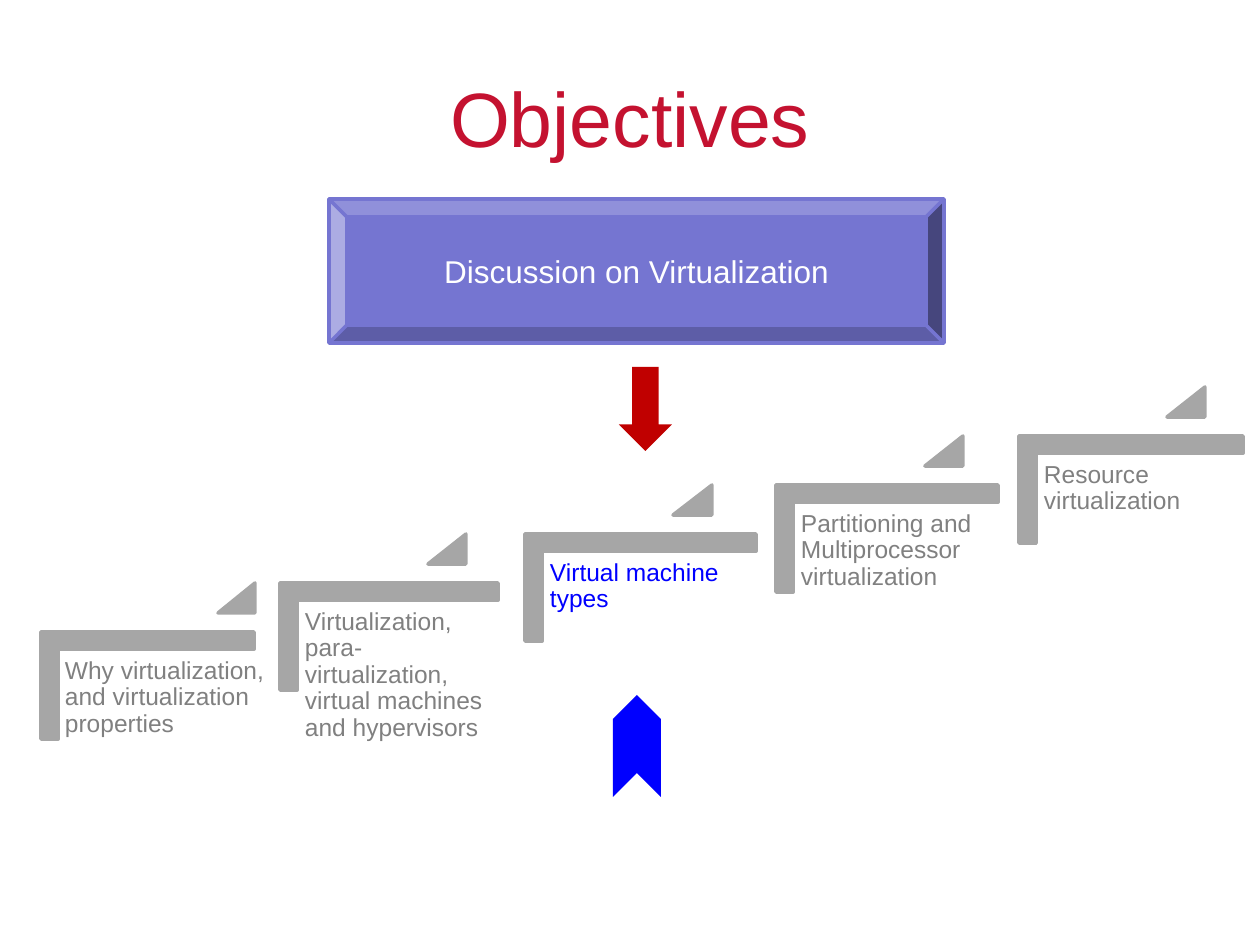
import pptx
import pptx.util
import pptx.dml.color
import pptx.enum.shapes
import pptx.enum.text

PX = 914400 // 126
SHAPE = pptx.enum.shapes.MSO_SHAPE
ALIGN = pptx.enum.text.PP_ALIGN
ANCHOR = pptx.enum.text.MSO_ANCHOR

COLORS = {
    "title": "C41230",
    "topic": "7575D1",
    "white": "FFFFFF",
    "down": "C00000",
    "step": "A6A6A6",
    "text": "808080",
    "current": "0000FF",
}

TITLE = "Objectives"
TOPIC = "Discussion on Virtualization"
# text, stair left and width, triangle left and width, text width, text colour
STEPS = [
    ("Why virtualization, and virtualization properties", 41, 213, 218, 37, 214, "text"),
    ("Virtualization, para-virtualization, virtual machines and hypervisors",
     280, 218, 428, 38, 197, "text"),
    ("Virtual machine types", 525, 231, 673, 39, 209, "current"),
    ("Partitioning and Multiprocessor virtualization", 776, 222, 925, 38, 200, "text"),
    ("Resource virtualization", 1019, 224, 1167, 38, 203, "text"),
]
FIRST_TOP, RISE = 632, 49
STAIR_H, TRIANGLE_H, TEXT_H = 107, 30, 141
TEXT_OFFSET = 18
STAIR_ADJ = 0.161


def rgb(name):
    return pptx.dml.color.RGBColor.from_string(COLORS[name])


def emu(*lengths):
    return [n * PX for n in lengths]


def write(tf, text, size, color, align=ALIGN.LEFT, anchor=ANCHOR.TOP,
          spacing=None, insets=None):
    tf.word_wrap = True
    tf.vertical_anchor = anchor
    if insets:
        (tf.margin_left, tf.margin_top,
         tf.margin_right, tf.margin_bottom) = emu(*insets)
    p = tf.paragraphs[0]
    p.alignment = align
    p.line_spacing = spacing
    r = p.add_run()
    r.text = text
    r.font.name = "Arial"
    r.font.size = pptx.util.Pt(size)
    r.font.color.rgb = rgb(color)


def add_block(slide, kind, box, color, outlined=False, adjustments=(), rotation=0):
    """Add a filled shape; box is its visible extent, also when turned a quarter."""
    x, y, w, h = box
    if rotation:
        x, y, w, h = x + (w - h) / 2, y + (h - w) / 2, h, w
    sp = slide.shapes.add_shape(kind, *(int(n) for n in emu(x, y, w, h)))
    sp.rotation = rotation
    sp.shadow.inherit = False
    for i, value in enumerate(adjustments):
        sp.adjustments[i] = value
    sp.fill.solid()
    sp.fill.fore_color.rgb = rgb(color)
    if outlined:
        sp.line.color.rgb = rgb(color)
        sp.line.width = pptx.util.Pt(2)
    else:
        sp.line.fill.background()
    return sp


def add_step(slide, index, step):
    text, left, width, tri_left, tri_width, text_width, color = step
    top = FIRST_TOP - index * RISE
    add_block(slide, SHAPE.CORNER, (left, top, width, STAIR_H), "step",
              outlined=True, adjustments=(STAIR_ADJ, STAIR_ADJ), rotation=90)
    add_block(slide, SHAPE.ISOSCELES_TRIANGLE,
              (tri_left, top - RISE, tri_width, TRIANGLE_H), "step",
              outlined=True, adjustments=(1,))
    box = slide.shapes.add_textbox(
        *emu(left + TEXT_OFFSET, top + TEXT_OFFSET, text_width, TEXT_H))
    insets = (7, 8, 7, 8) if index else (6, 8, 0, 8)
    write(box.text_frame, text, 14, color, spacing=0.9, insets=insets)


def main():
    prs = pptx.Presentation()
    prs.slide_width, prs.slide_height = emu(1260, 945)
    slide = prs.slides.add_slide(prs.slide_layouts[6])

    title = slide.shapes.add_textbox(*emu(63, 38, 1134, 157))
    write(title.text_frame, TITLE, 44, "title", ALIGN.CENTER, ANCHOR.MIDDLE)

    topic = add_block(slide, SHAPE.BEVEL, (329, 199, 615, 144), "topic", outlined=True)
    write(topic.text_frame, TOPIC, 18, "white", ALIGN.CENTER, ANCHOR.MIDDLE)

    add_block(slide, SHAPE.DOWN_ARROW, (619, 367, 53, 84), "down")
    for index, step in enumerate(STEPS):
        add_step(slide, index, step)
    add_block(slide, SHAPE.CHEVRON, (613, 695, 48, 102), "current", rotation=270)

    prs.save("out.pptx")


if __name__ == "__main__":
    main()
